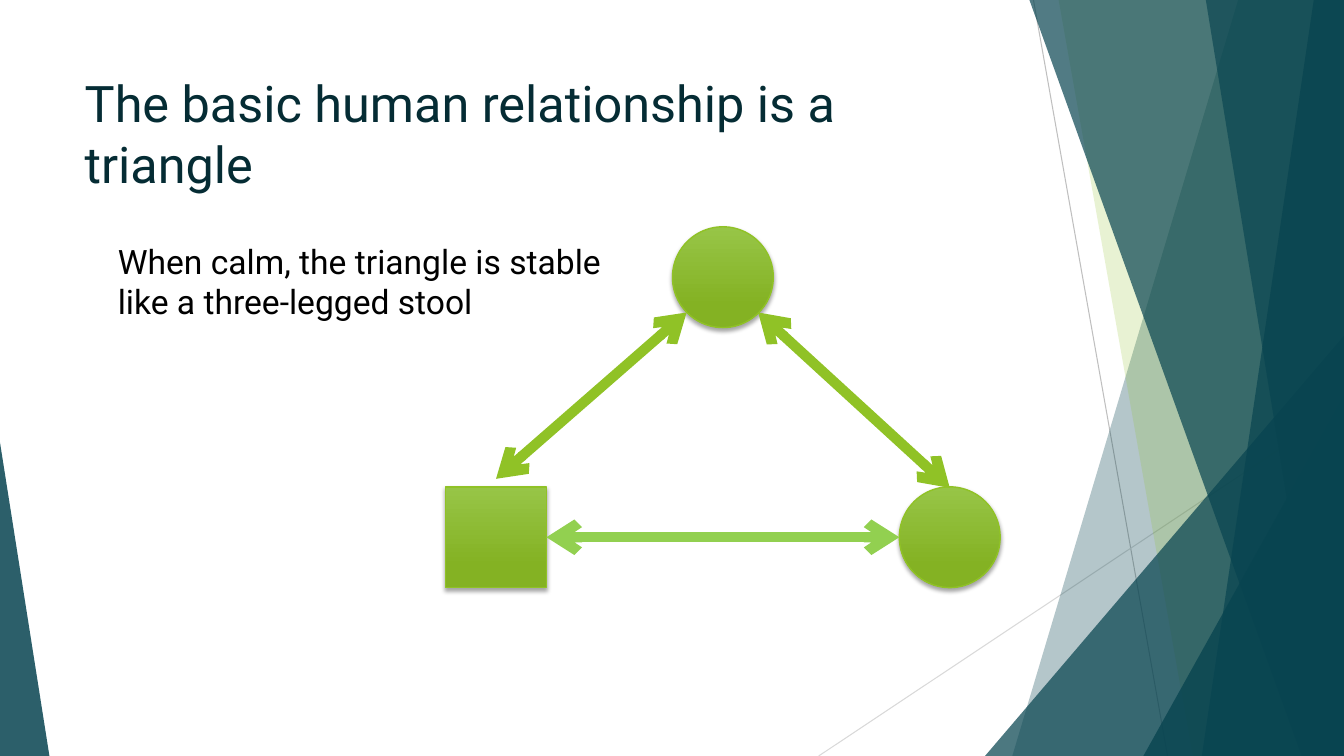
from lxml import etree
from pptx import Presentation
from pptx.dml.color import RGBColor
from pptx.enum.shapes import MSO_CONNECTOR, MSO_SHAPE
from pptx.enum.text import MSO_ANCHOR
from pptx.oxml.ns import qn
from pptx.util import Inches, Pt

TITLE = "The basic human relationship is a triangle"
NOTE = "When calm, the triangle is stable like a three-legged stool"
FONT = "Roboto"
INK = RGBColor(0x05, 0x2C, 0x34)
BLACK = RGBColor(0, 0, 0)
TEAL = RGBColor(0x08, 0x44, 0x50)
GREEN = RGBColor(0x90, 0xC2, 0x26)
LIGHT = RGBColor(0x97, 0xC5, 0x47)
DARK = RGBColor(0x84, 0xB2, 0x23)
LIME = RGBColor(0x92, 0xD0, 0x50)
GREY = RGBColor(0xBF, 0xBF, 0xBF)
PALE = RGBColor(0xD9, 0xD9, 0xD9)
OVAL, RECT = MSO_SHAPE.OVAL, MSO_SHAPE.RECTANGLE
WEDGE = MSO_SHAPE.ISOSCELES_TRIANGLE
LINE = MSO_CONNECTOR.STRAIGHT
TOP = MSO_ANCHOR.TOP
WIDE, HIGH = 13.33, 7.5

RULES = [((10.25, 0), (11.58, HIGH), GREY), ((WIDE, 4.03), (8.12, HIGH), PALE)]
# top x, bottom x, colour, opacity
BANDS = [(12.28, 10.04, TEAL, 30), (10.5, 11.83, GREEN, 20),
         (9.77, 3.33, TEAL, 72), (10.21, 12.91, TEAL, 70),
         (13.03, 11.92, TEAL, 70), (11.96, 13.18, TEAL, 65)]
BANDS = [("band", *band) for band in BANDS]
BANDS[2] = ("wedge", (9.77, 3.33, 3.56, 1), None, TEAL, 72)
BANDS += [("wedge", (11.34, 3.93, 1.99, 1), None, TEAL, 80),
          ("wedge", (0, 4.39, 0.49, 0), None, TEAL, 85)]
NODES = {"top": (OVAL, 6.67, 2.25), "right": (OVAL, 8.92, 4.83),
         "left": (RECT, 4.42, 4.83)}
SIDE = 1
ARROWS = [((5.42, 5.33), (8.92, 5.33), LIME), ((7.52, 3.1), (9.42, 4.84), GREEN),
          ((4.92, 4.75), (6.81, 3.1), GREEN)]


def box(*nums):
    return [Inches(num) for num in nums]


def write(shape, text, size=24, color=BLACK):
    frame = shape.text_frame
    frame.word_wrap = True
    frame.vertical_anchor = TOP
    para = frame.paragraphs[0]
    run = para.add_run()
    run.text = text
    run.font.name, run.font.size = FONT, Pt(size)
    run.font.color.rgb = color


def tint(shape, color, alpha):
    shape.shadow.inherit = False
    shape.line.fill.background()
    shape.fill.solid()
    shape.fill.fore_color.rgb = color
    tone = shape._element.spPr.find(qn("a:solidFill"))[0]
    etree.SubElement(tone, qn("a:alpha"), val=str(alpha * 1000))


def band(shapes, top, low):
    pen = shapes.build_freeform(Inches(top), 0)
    pen.add_line_segments([box(WIDE, 0), box(WIDE, HIGH), box(low, HIGH)])
    return pen.convert_to_shape()


def wedge(shapes, left, top, width, tip):
    shape = shapes.add_shape(WEDGE, *box(left, top, width, HIGH - top))
    shape.adjustments[0] = tip
    return shape


def node(shapes, kind, left, top):
    shape = shapes.add_shape(kind, *box(left, top, SIDE, SIDE))
    shape.fill.gradient()
    shape.fill.gradient_angle = 270
    for stop, color, spot in zip(shape.fill.gradient_stops, (LIGHT, DARK), (0, 0.78)):
        stop.color.rgb, stop.position = color, spot
    shape.line.color.rgb, shape.line.width = GREEN, Pt(1)
    shape.shadow.inherit = False
    glow = shape._element.spPr.find(qn("a:effectLst"))
    cast = etree.SubElement(glow, qn("a:outerShdw"), blurRad=str(Pt(3)),
                            dist=str(Pt(2)), dir="5400000", rotWithShape="0")
    tone = etree.SubElement(cast, qn("a:srgbClr"), val=str(BLACK))
    etree.SubElement(tone, qn("a:alpha"), val="35000")
    return shape


def link(shapes, start, end, color, width=0.75, tips=()):
    line = shapes.add_connector(LINE, *box(*start, *end))
    line.line.color.rgb, line.line.width = color, Pt(width)
    for tip in tips:
        etree.SubElement(line.line._get_or_add_ln(), qn(tip), type="arrow")
    etree.SubElement(line._element.spPr, qn("a:effectLst"))
    return line


def main():
    """Build the relationship triangle slide."""
    deck = Presentation()
    deck.slide_width, deck.slide_height = box(WIDE, HIGH)
    slide = deck.slides.add_slide(deck.slide_layouts[5])
    shapes = slide.shapes
    for rule in RULES:
        link(shapes, *rule)
    for kind, first, low, color, alpha in BANDS:
        shape = band(shapes, first, low) if kind == "band" else wedge(shapes, *first)
        tint(shape, color, alpha)
    title = shapes.title
    title.left, title.top, title.width, title.height = box(0.74, 0.67, 9.4, 1.44)
    write(title, TITLE, size=36, color=INK)
    title.text_frame.paragraphs[0].alignment = LEFT
    nodes = {name: node(shapes, *spec) for name, spec in NODES.items()}
    lines = [link(shapes, *arrow, width=7.25, tips=("a:headEnd", "a:tailEnd"))
             for arrow in ARROWS]
    lines[0].begin_connect(nodes["left"], 3)
    write(shapes.add_textbox(*box(1.07, 2.34, 5, 0.91)), NOTE)
    deck.save("out.pptx")


from pptx.enum.text import PP_ALIGN
LEFT = PP_ALIGN.LEFT

if __name__ == "__main__":
    main()
